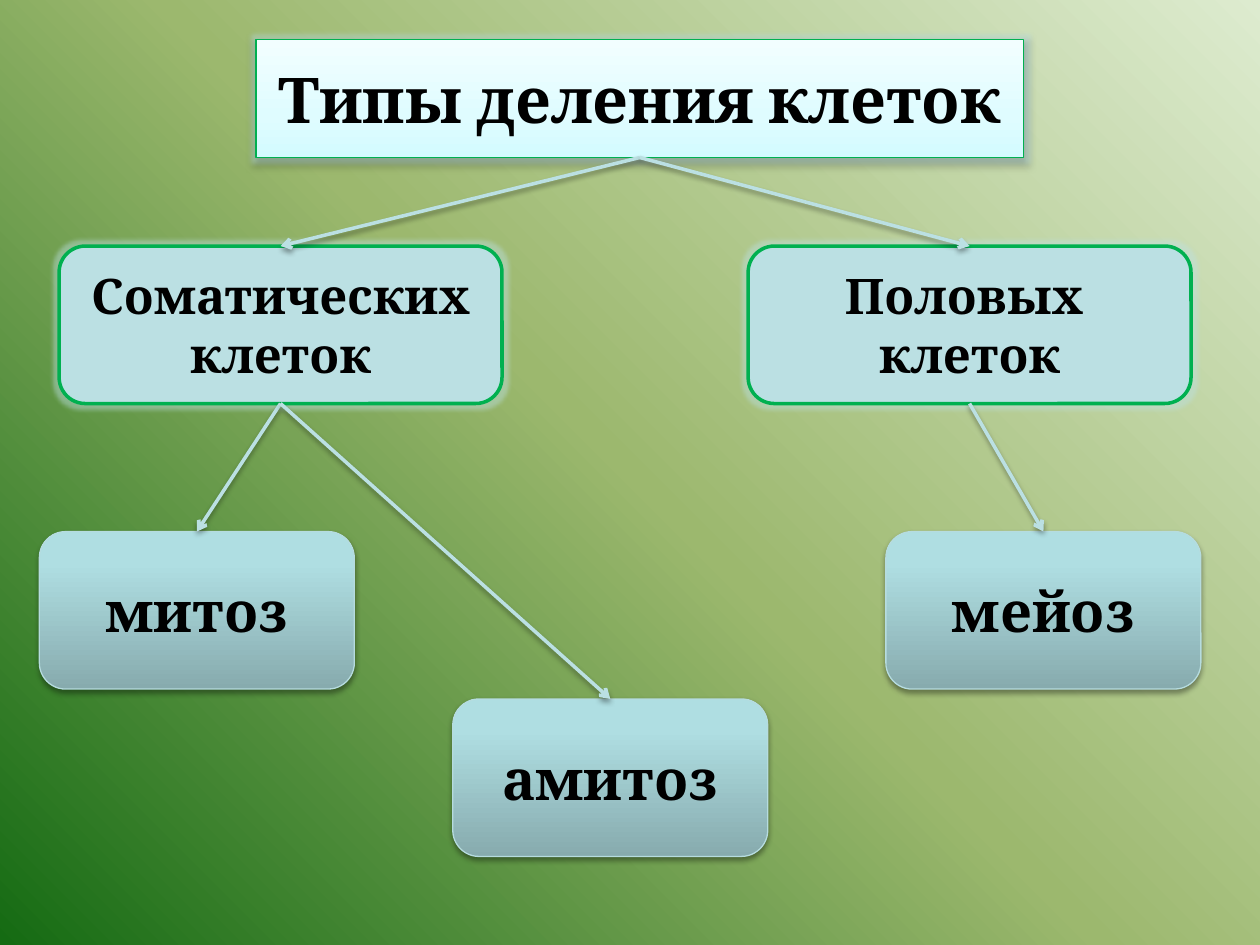
from dataclasses import dataclass

from lxml.etree import SubElement
from pptx import Presentation
from pptx.dml.color import RGBColor
from pptx.enum.shapes import MSO_CONNECTOR, MSO_SHAPE
from pptx.enum.text import MSO_ANCHOR, MSO_AUTO_SIZE, PP_ALIGN
from pptx.oxml import parse_xml
from pptx.oxml.ns import nsdecls, qn
from pptx.util import Pt


@dataclass(frozen=True)
class Theme:
    font: str = "Cambria"
    title_size: int = 36
    group_size: int = 28
    type_size: int = 32
    ink: str = "000000"
    pale: str = "BBE0E3"
    green: str = "00B050"
    type_edge: str = "B6DCDF"
    background: tuple = ((0, "DDEBCF"), (50, "9CB86E"), (100, "156B13"))
    title_fill: tuple = ((0, "D3FBFF"), (35, "DFFCFF"), (100, "F2FEFF"))
    type_fill: tuple = ((0, "87ABAE"), (80, "AFDEE2"), (100, "AFE0E4"))


theme = Theme()

GLOW = (f'<a:glow {nsdecls("a")} rad="{Pt(5)}"><a:srgbClr val="{theme.pale}">'
        '<a:alpha val="45000"/></a:srgbClr></a:glow>')
SHADOW = (f'<a:outerShdw {nsdecls("a")} blurRad="{Pt(3.1)}" dist="{Pt(1.7)}" '
          f'dir="5400000" rotWithShape="0"><a:srgbClr val="{theme.ink}">'
          '<a:alpha val="37000"/></a:srgbClr></a:outerShdw>')


def paint_gradient(fill, element, stops, angle):
    """Give the fill any number of colour stops; the angle runs clockwise."""
    fill.gradient()
    gradient = element.find(".//" + qn("a:gradFill"))
    stop_list = gradient.find(qn("a:gsLst"))
    stop_list.clear()
    for position, color in stops:
        stop = SubElement(stop_list, qn("a:gs"), pos=str(position * 1000))
        SubElement(stop, qn("a:srgbClr"), val=color)
    gradient.find(qn("a:lin")).set("ang", str(angle * 60000))


def format_box(box, text, *, size, fill, edge, edge_width, effects):
    """Write the centred text and format the box around it."""
    if isinstance(fill, str):
        box.fill.solid()
        box.fill.fore_color.rgb = RGBColor.from_string(fill)
    else:
        paint_gradient(box.fill, box.element.spPr, fill, 270)
    box.line.color.rgb = RGBColor.from_string(edge)
    box.line.width = Pt(edge_width)
    box.shadow.inherit = False
    effect_list = box.element.spPr.find(qn("a:effectLst"))
    for effect in effects:
        effect_list.append(parse_xml(effect))

    frame = box.text_frame
    frame.text = text
    frame.word_wrap = True
    frame.auto_size = MSO_AUTO_SIZE.NONE
    frame.vertical_anchor = MSO_ANCHOR.MIDDLE
    for paragraph in frame.paragraphs:
        paragraph.alignment = PP_ALIGN.CENTER
        for run in paragraph.runs:
            run.font.name = theme.font
            run.font.size = Pt(size)
            run.font.bold = True
            run.font.color.rgb = RGBColor.from_string(theme.ink)


presentation = Presentation()
presentation.slide_width, presentation.slide_height = Pt(720), Pt(540)
slide = presentation.slides.add_slide(presentation.slide_layouts[5])

# Background
background = slide.background.fill
background.solid()
paint_gradient(background, slide.element.cSld, theme.background, 135)

# Title in a rounded box
title = slide.shapes.title
title.left, title.top, title.width, title.height = map(Pt, (146.25, 22.5, 438.75, 67.5))
title.element.spPr.append(parse_xml(
    f'<a:prstGeom {nsdecls("a")} prst="roundRect"><a:avLst/></a:prstGeom>'))
format_box(title, "Типы деления клеток", size=theme.title_size,
           fill=theme.title_fill, edge=theme.green, edge_width=0.75,
           effects=(GLOW, SHADOW))

# Cell groups and types of division
group_style = dict(size=theme.group_size, fill=theme.pale, edge=theme.green,
                   edge_width=2, effects=(GLOW,))
type_style = dict(size=theme.type_size, fill=theme.type_fill, edge=theme.type_edge,
                  edge_width=0.75, effects=(SHADOW,))
boxes = []
for text, left, top, width, style in (
    ("Соматических клеток", 33.75, 140.6, 253.1, group_style),
    ("Половых \nклеток", 427.5, 140.6, 253.1, group_style),
    ("митоз", 22.5, 303.75, 180, type_style),
    ("мейоз", 506.25, 303.75, 180, type_style),
    ("амитоз", 258.75, 399.4, 180, type_style),
):
    box = slide.shapes.add_shape(MSO_SHAPE.ROUNDED_RECTANGLE,
                                 Pt(left), Pt(top), Pt(width), Pt(90))
    format_box(box, text, **style)
    boxes.append(box)
somatic, germ, mitosis, meiosis, amitosis = boxes

# Arrows from each box down to its kinds
for parent, child in ((title, somatic), (title, germ), (somatic, mitosis),
                      (somatic, amitosis), (germ, meiosis)):
    arrow = slide.shapes.add_connector(MSO_CONNECTOR.STRAIGHT, 0, 0, 0, 0)
    arrow.begin_connect(parent, 2)
    arrow.end_connect(child, 0)
    arrow.line.color.rgb = RGBColor.from_string(theme.pale)
    arrow.line.width = Pt(2)
    properties = arrow.element.spPr
    SubElement(properties.find(qn("a:ln")), qn("a:tailEnd"), type="arrow")
    SubElement(properties, qn("a:effectLst")).append(parse_xml(SHADOW))

presentation.save("out.pptx")
